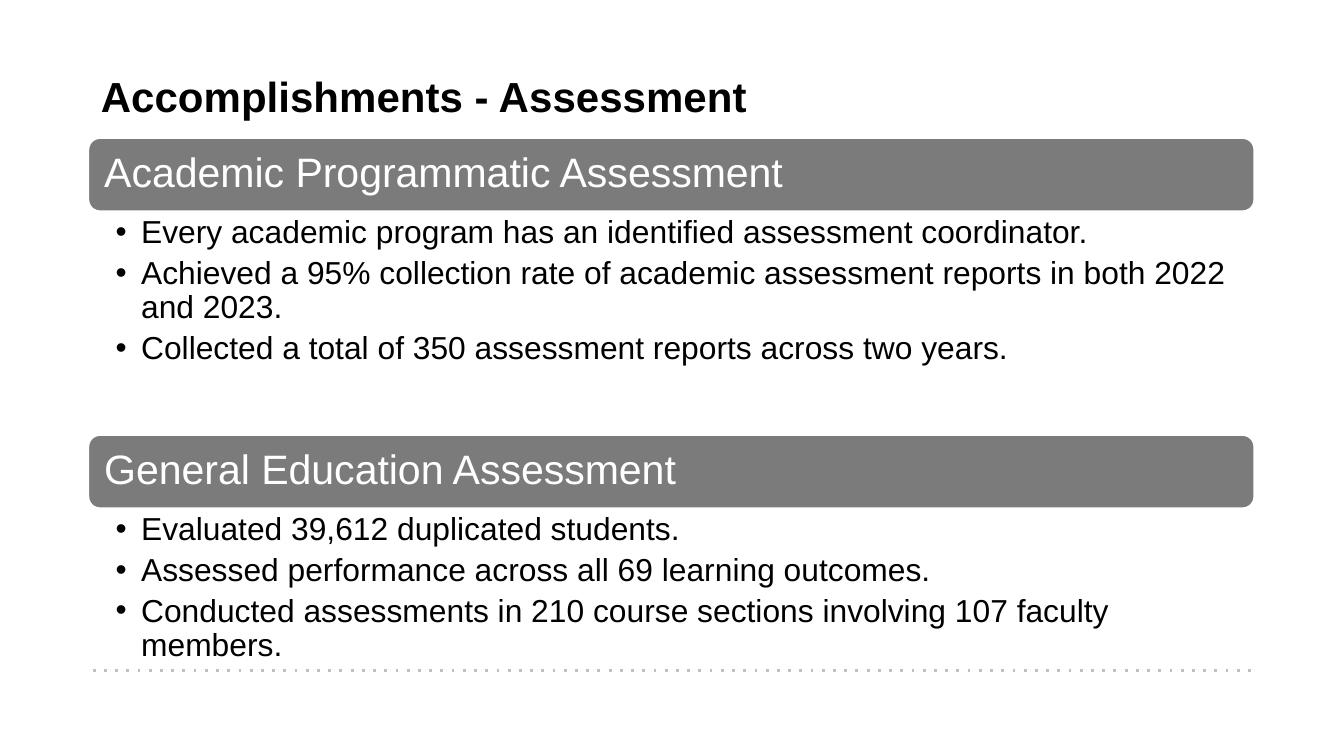
import pptx
import pptx.dml.color
import pptx.enum.shapes
import pptx.enum.text
import pptx.oxml
import pptx.oxml.ns
import pptx.util

Inches = pptx.util.Inches
Pt = pptx.util.Pt
RGBColor = pptx.dml.color.RGBColor
Anchor = pptx.enum.text.MSO_ANCHOR

TITLE = "Accomplishments - Assessment"
SECTIONS = [
    ("Academic Programmatic Assessment", [
        "Every academic program has an identified assessment coordinator.",
        "Achieved a 95% collection rate of academic assessment reports in both 2022 and 2023.",
        "Collected a total of 350 assessment reports across two years.",
    ]),
    ("General Education Assessment", [
        "Evaluated 39,612 duplicated students.",
        "Assessed performance across all 69 learning outcomes.",
        "Conducted assessments in 210 course sections involving 107 faculty members.",
    ]),
]

BLACK = RGBColor(0x00, 0x00, 0x00)
WHITE = RGBColor(0xFF, 0xFF, 0xFF)
GRAY = RGBColor(0x7B, 0x7B, 0x7B)
SILVER = RGBColor(0xC0, 0xC0, 0xC0)

LEFT, WIDTH = 0.65, 8.69
FIRST_BAR, SECTION_STEP, BAR_HEIGHT = 1.02, 2.21, 0.56
LIST_HEIGHTS = [1.64, 1.17]


def make_element(markup):
    return pptx.oxml.parse_xml(markup % pptx.oxml.ns.nsdecls("a"))


def place(shape, left, top, width, height):
    shape.left, shape.top = Inches(left), Inches(top)
    shape.width, shape.height = Inches(width), Inches(height)


def add_bullet(para):
    properties = para._p.get_or_add_pPr()
    properties.set("marL", str(Inches(0.19)))
    properties.set("indent", str(-Inches(0.19)))
    properties.append(make_element('<a:buFont %s typeface="Arial"/>'))
    properties.append(make_element('<a:buChar %s char="•"/>'))


def write(shape, texts, size, color=BLACK, bold=False, spacing=0.9, gap=0,
          bullets=False, anchor=Anchor.TOP, insets=(0.1, 0.05, 0.1, 0.05)):
    frame = shape.text_frame
    frame.word_wrap = True
    frame.auto_size = pptx.enum.text.MSO_AUTO_SIZE.NONE
    frame.vertical_anchor = anchor
    (frame.margin_left, frame.margin_top,
     frame.margin_right, frame.margin_bottom) = map(Inches, insets)
    for index, text in enumerate(texts):
        para = frame.paragraphs[0] if index == 0 else frame.add_paragraph()
        para.alignment = pptx.enum.text.PP_ALIGN.LEFT
        para.line_spacing = spacing
        para.space_before = Pt(gap if index else 0)
        if bullets:
            add_bullet(para)
        span = para.add_run()
        span.text = text
        span.font.name = "Arial"
        span.font.size = Pt(size)
        span.font.bold = bold
        span.font.color.rgb = color


deck = pptx.Presentation()
deck.slide_width = Inches(10)
deck.slide_height = deck.slide_width * 9 // 16
page = deck.slides.add_slide(deck.slide_layouts.get_by_name("Two Content"))

rule = page.shapes.add_connector(
    pptx.enum.shapes.MSO_CONNECTOR.STRAIGHT,
    Inches(0.69), Inches(4.99), Inches(9.32), Inches(4.99))
rule.line.color.rgb = SILVER
rule.line.width = Pt(1.5)
rule.line._get_or_add_ln().append(make_element('<a:prstDash %s val="dot"/>'))
rule._element.spPr.append(make_element("<a:effectLst %s/>"))

title = page.shapes.title
place(title, LEFT, 0.55, 8.74, 0.67)
write(title, [TITLE], 22.5, bold=True, spacing=0.8)

for index, (heading, points) in enumerate(SECTIONS):
    top = FIRST_BAR + index * SECTION_STEP
    bar = page.shapes.add_shape(
        pptx.enum.shapes.MSO_SHAPE.ROUNDED_RECTANGLE,
        Inches(LEFT), Inches(top), Inches(WIDTH), Inches(BAR_HEIGHT))
    bar.shadow.inherit = False
    bar.fill.solid()
    bar.fill.fore_color.rgb = GRAY
    bar.line.color.rgb = WHITE
    bar.line.width = Pt(2)
    write(bar, [heading], 22, color=WHITE, anchor=Anchor.MIDDLE)

    body = page.placeholders[index + 1]
    place(body, LEFT, top + BAR_HEIGHT, WIDTH, LIST_HEIGHTS[index])
    write(body, points, 17, gap=3.4, bullets=True,
          insets=(0.21, 0.03, 0.17, 0.03))

deck.save("out.pptx")
